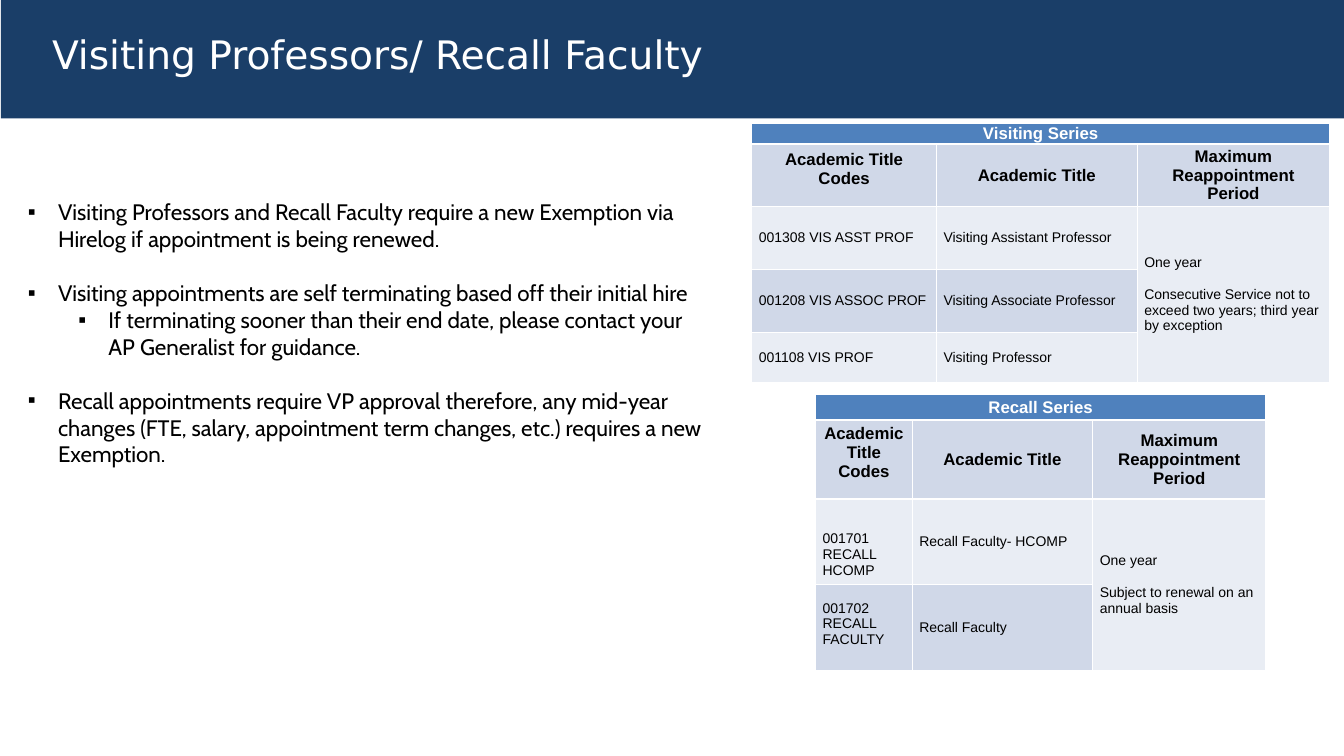
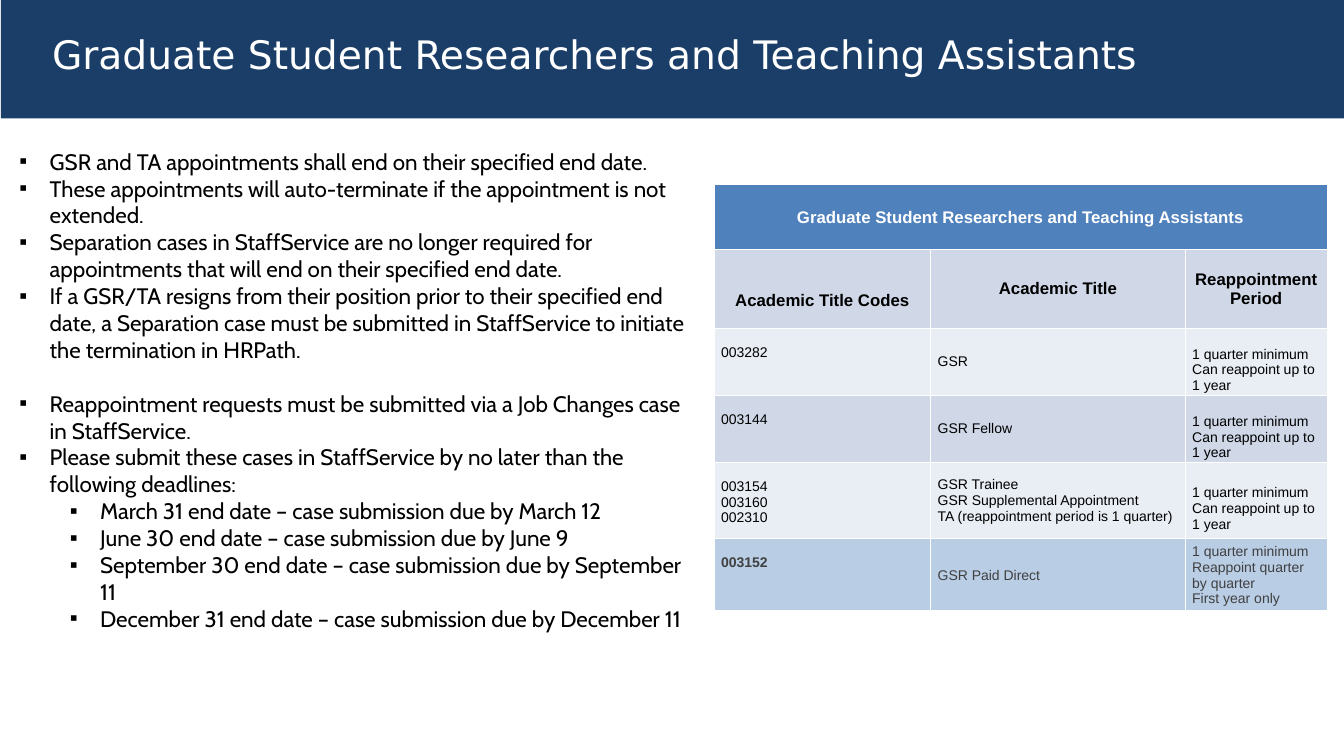
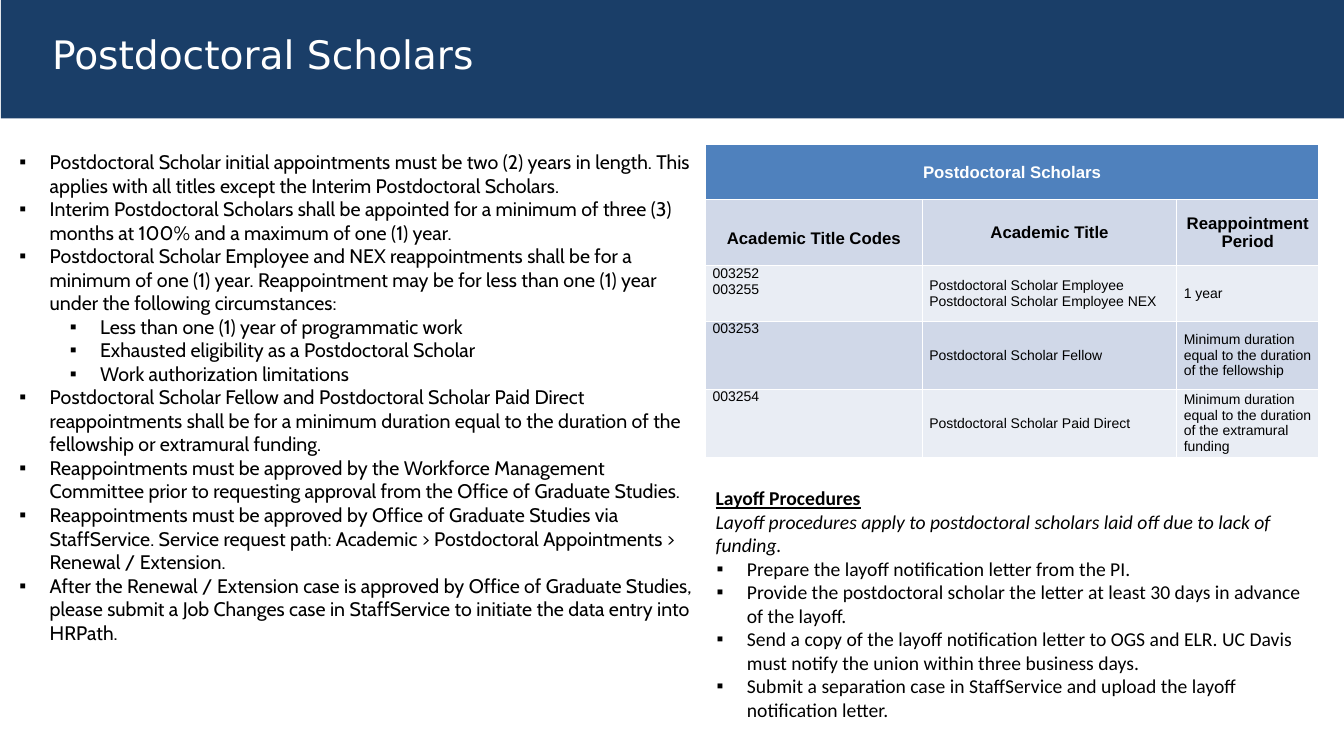
from dataclasses import dataclass

from lxml import etree
from pptx import Presentation
from pptx import util as u
from pptx.dml.color import RGBColor
from pptx.enum import shapes, text
from pptx.oxml import ns

UNIT = u.Inches(1) // 12
COLUMNS, ROWS = 160, 90
TOP = text.MSO_ANCHOR.TOP
MIDDLE = text.MSO_ANCHOR.MIDDLE
BOTTOM = text.MSO_ANCHOR.BOTTOM


@dataclass(frozen=True)
class Theme:
    """Colours, fonts and type sizes shared by the slides."""
    band: str = "1A3E68"
    white: str = "FFFFFF"
    ink: str = "000000"
    muted: str = "404040"
    table_title: str = "4F81BD"
    dark_row: str = "D0D8E8"
    light_row: str = "E9EDF4"
    accent_row: str = "B9CDE5"
    title_font: str = "DejaVu Sans"
    list_font: str = "Cabin"
    note_font: str = "Calibri"
    table_font: str = "Arial"
    title_size: float = 28
    list_size: float = 16
    small_list_size: float = 14
    header_size: float = 12
    cell_size: float = 10


THEME = Theme()


@dataclass(frozen=True)
class Box:
    """A region in grid columns and rows."""
    left: float
    top: float
    width: float
    height: float

    def emu(self):
        """Return the region in slide units."""
        return [grid(n) for n in (self.left, self.top, self.width, self.height)]


@dataclass(frozen=True)
class Item:
    """One paragraph of a list."""
    text: str
    level: int = 0
    gap: bool = False
    bullet: bool = True
    bold: bool = False
    underline: bool = False
    italic: bool = False


@dataclass(frozen=True)
class Cell:
    """One table cell; lead is the number of lines left free above the text."""
    text: str
    lead: int = 0
    anchor: text.MSO_ANCHOR = MIDDLE
    bold: bool = False
    gap: float = 0
    color: str = THEME.ink


def grid(count):
    """Convert grid steps to slide units."""
    return u.Emu(round(count * UNIT))


def style(paragraph, font, size, color, bold=False, italic=False, underline=False):
    """Format every run of a paragraph."""
    for run in paragraph.runs:
        run.font.name = font
        run.font.size = u.Pt(size)
        run.font.color.rgb = RGBColor.from_string(color)
        run.font.bold, run.font.italic, run.font.underline = bold, italic, underline


def place(shape, box):
    """Move and size a shape to a grid region."""
    shape.left, shape.top, shape.width, shape.height = box.emu()


def title_band(slide, title):
    """Draw the coloured band and set the title on it."""
    band = slide.shapes.add_shape(shapes.MSO_SHAPE.RECTANGLE, *Box(0.1, -0.2, COLUMNS, 14.3).emu())
    band.shadow.inherit = False
    band.fill.solid()
    band.fill.fore_color.rgb = RGBColor.from_string(THEME.band)
    band.line.fill.background()
    slide.shapes._spTree.insert(2, band._element)
    placeholder = slide.shapes.title
    place(placeholder, Box(5, 3, 146, 6.84))
    frame = placeholder.text_frame
    frame.auto_size = text.MSO_AUTO_SIZE.NONE
    frame.text = title
    frame.paragraphs[0].alignment = text.PP_ALIGN.LEFT
    style(frame.paragraphs[0], THEME.title_font, THEME.title_size, THEME.white)


def set_bullet(paragraph, item):
    """Give a paragraph its indent and its bullet."""
    properties = paragraph._p.get_or_add_pPr()
    left = 0.31 + 0.5 * item.level if item.bullet else 0
    properties.set("marL", str(u.Inches(left)))
    properties.set("indent", str(u.Inches(-0.3 if item.bullet else 0)))
    if item.bullet:
        etree.SubElement(properties, ns.qn("a:buFont"), typeface="Arial")
        etree.SubElement(properties, ns.qn("a:buChar"), char="▪")
    else:
        etree.SubElement(properties, ns.qn("a:buNone"))


def bullet_list(placeholder, box, items, font, size):
    """Fill a body placeholder with a list."""
    place(placeholder, box)
    frame = placeholder.text_frame
    frame.auto_size = text.MSO_AUTO_SIZE.NONE
    frame.vertical_anchor = TOP
    frame.text = "\n".join(item.text for item in items)
    for paragraph, item in zip(frame.paragraphs, items):
        paragraph.level = item.level
        set_bullet(paragraph, item)
        paragraph.line_spacing = 1.0
        paragraph.space_before = u.Pt(size * 1.21 if item.gap else 0)
        paragraph.space_after = u.Pt(0)
        style(paragraph, font, size, THEME.ink, item.bold, item.italic, item.underline)


def set_borders(cell, bottom_width=1):
    """Draw white lines on the four sides of a cell."""
    properties = cell._tc.get_or_add_tcPr()
    for index, side in enumerate("LRTB"):
        width = bottom_width if side == "B" else 1
        line = etree.Element(ns.qn("a:ln" + side), w=str(u.Pt(width)))
        fill = etree.SubElement(line, ns.qn("a:solidFill"))
        etree.SubElement(fill, ns.qn("a:srgbClr"), val=THEME.white)
        properties.insert(index, line)


def fill_cell(cell, content, fill, size, centred=False, bottom=0):
    """Write and format one table cell."""
    cell.fill.solid()
    cell.fill.fore_color.rgb = RGBColor.from_string(fill)
    cell.margin_left = cell.margin_right = u.Inches(0.07)
    cell.margin_top = u.Inches(0.16 * content.lead)
    cell.margin_bottom = u.Inches(bottom)
    cell.vertical_anchor = content.anchor
    cell.text_frame.text = content.text
    for index, paragraph in enumerate(cell.text_frame.paragraphs):
        paragraph.alignment = text.PP_ALIGN.CENTER if centred else text.PP_ALIGN.LEFT
        paragraph.space_before = u.Pt(content.gap if index else 0)
        style(paragraph, THEME.table_font, size, content.color, content.bold)


def new_table(slide, left, top, widths, heights):
    """Add a plain table with the given columns and rows."""
    box = Box(left, top, sum(widths), sum(heights))
    table = slide.shapes.add_table(len(heights), len(widths), *box.emu()).table
    table.first_row = table.horz_banding = False
    for column, width in zip(table.columns, widths):
        column.width = grid(width)
    for row, height in zip(table.rows, heights):
        row.height = grid(height)
    return table


def fill_rows(table, first, rows, fills, bottom_width=1):
    """Fill body rows; a missing last cell joins the one above."""
    for index, contents in enumerate(rows):
        for column, content in enumerate(contents):
            cell = table.cell(first + index, column)
            fill_cell(cell, content, fills[index % len(fills)], THEME.cell_size)
            set_borders(cell, bottom_width)
    if len(rows[-1]) < len(table.columns):
        last = len(table.columns) - 1
        table.cell(first, last).merge(table.cell(first + len(rows) - 1, last))


def series_table(slide, left, top, widths, heights, title, period, rows):
    """Draw a titled table of academic titles."""
    table = new_table(slide, left, top, widths, heights)
    table.cell(0, 0).merge(table.cell(0, len(widths) - 1))
    fill_cell(table.cell(0, 0), Cell(title, bold=True, color=THEME.white),
              THEME.table_title, THEME.header_size, True)
    for column, label in enumerate(("Academic Title Codes", "Academic Title", period)):
        anchor, bottom = (MIDDLE, 0) if column else (BOTTOM, 0.18)
        cell = table.cell(1, column)
        fill_cell(cell, Cell(label, anchor=anchor, bold=True), THEME.dark_row,
                  THEME.header_size, True, bottom)
        set_borders(cell)
    fill_rows(table, 2, rows, (THEME.light_row, THEME.dark_row))


def code(label, lead=0, **options):
    """Make a top-aligned cell of title codes."""
    return Cell(label, lead, TOP, **options)


def start_slide(presentation, layout, title):
    """Add a slide with its title band."""
    slide = presentation.slides.add_slide(presentation.slide_layouts[layout])
    title_band(slide, title)
    return slide


WIDE_COLUMNS = (25.8, 30.3, 16.9)


def visiting_slide(presentation):
    """Build the slide on visiting and recall faculty."""
    slide = start_slide(presentation, 1, "Visiting Professors/ Recall Faculty")
    bullet_list(slide.placeholders[1], Box(2, 23, 83, 36.75), [
        Item("Visiting Professors and Recall Faculty require a new Exemption via Hirelog if appointment is being renewed."),
        Item("Visiting appointments are self terminating based off their initial hire", gap=True),
        Item("If terminating sooner than their end date, please contact your AP Generalist for guidance.", 1),
        Item("Recall appointments require VP approval therefore, any mid-year changes (FTE, salary, appointment term changes, etc.) requires a new Exemption.", gap=True),
    ], THEME.list_font, THEME.list_size)
    period = "Maximum Reappointment Period"
    series_table(slide, 89.5, 14.75, (22, 23.9, 22.9), (2.4, 7.4, 7.5, 7.5, 6), "Visiting Series", period, [
        (Cell("001308 VIS ASST PROF"), Cell("Visiting Assistant Professor"),
         Cell("One year\nConsecutive Service not to exceed two years; third year by exception", gap=11.5)),
        (Cell("001208 VIS ASSOC PROF"), Cell("Visiting Associate Professor")),
        (Cell("001108 VIS PROF"), Cell("Visiting Professor")),
    ])
    series_table(slide, 97.1, 47, (11.5, 21.5, 20.6), (3, 9.4, 10.2, 10.2), "Recall Series", period, [
        (code("001701 RECALL HCOMP", 2), Cell("Recall Faculty- HCOMP"),
         Cell("One year\nSubject to renewal on an annual basis", gap=11.5)),
        (code("001702 RECALL FACULTY", 1), Cell("Recall Faculty")),
    ])


def graduate_slide(presentation):
    """Build the slide on graduate researchers and teaching assistants."""
    title = "Graduate Student Researchers and Teaching Assistants"
    slide = start_slide(presentation, 1, title)
    deadlines = (("March 31", "March 12"), ("June 30", "June 9"),
                 ("September 30", "September 11"), ("December 31", "December 11"))
    bullet_list(slide.placeholders[1], Box(1, 17, 83, 56.2), [
        Item("GSR and TA appointments shall end on their specified end date."),
        Item("These appointments will auto-terminate if the appointment is not extended."),
        Item("Separation cases in StaffService are no longer required for appointments that will end on their specified end date."),
        Item("If a GSR/TA resigns from their position prior to their specified end date, a Separation case must be submitted in StaffService to initiate the termination in HRPath."),
        Item("Reappointment requests must be submitted via a Job Changes case in StaffService.", gap=True),
        Item("Please submit these cases in StaffService by no later than the following deadlines:"),
        *(Item(f"{end} end date – case submission due by {due}", 1) for end, due in deadlines),
    ], THEME.list_font, THEME.list_size)
    quarter = Cell("1 quarter minimum\nCan reappoint up to 1 year", 1)
    series_table(slide, 85, 22, WIDE_COLUMNS, (7.7, 9.4, 8, 8, 9), title, "Reappointment Period", [
        (code("003282", 1), Cell("GSR"), quarter),
        (code("003144", 1), Cell("GSR Fellow"), quarter),
        (code("003154\n003160\n002310", 1),
         Cell("GSR Trainee\nGSR Supplemental Appointment\nTA (reappointment period is 1 quarter)"), quarter),
    ])
    paid_direct = new_table(slide, 85, 64.1, WIDE_COLUMNS, (8.8,))
    fill_rows(paid_direct, 0, [
        (code("003152", 1, bold=True, color=THEME.muted), Cell("GSR Paid Direct", color=THEME.muted),
         Cell("1 quarter minimum\nReappoint quarter by quarter\nFirst year only", color=THEME.muted)),
    ], (THEME.accent_row,), 3)


def postdoctoral_slide(presentation):
    """Build the slide on postdoctoral scholars."""
    title = "Postdoctoral Scholars"
    slide = start_slide(presentation, 3, title)
    bullet_list(slide.placeholders[1], Box(1, 17.25, 83, 60.6), [
        Item("Postdoctoral Scholar initial appointments must be two (2) years in length. This applies with all titles except the Interim Postdoctoral Scholars."),
        Item("Interim Postdoctoral Scholars shall be appointed for a minimum of three (3) months at 100% and a maximum of one (1) year."),
        Item("Postdoctoral Scholar Employee and NEX reappointments shall be for a minimum of one (1) year. Reappointment may be for less than one (1) year under the following circumstances:"),
        Item("Less than one (1) year of programmatic work", 1),
        Item("Exhausted eligibility as a Postdoctoral Scholar", 1),
        Item("Work authorization limitations", 1),
        Item("Postdoctoral Scholar Fellow and Postdoctoral Scholar Paid Direct reappointments shall be for a minimum duration equal to the duration of the fellowship or extramural funding."),
        Item("Reappointments must be approved by the Workforce Management Committee prior to requesting approval from the Office of Graduate Studies."),
        Item("Reappointments must be approved by Office of Graduate Studies via StaffService. Service request path: Academic > Postdoctoral Appointments > Renewal / Extension."),
        Item("After the Renewal / Extension case is approved by Office of Graduate Studies, please submit a Job Changes case in StaffService to initiate the data entry into HRPath."),
    ], THEME.list_font, THEME.small_list_size)
    series_table(slide, 84, 17.25, WIDE_COLUMNS, (6.5, 7.9, 6.6, 8.1, 8.1), title, "Reappointment Period", [
        (code("003252\n003255"), Cell("Postdoctoral Scholar Employee\nPostdoctoral Scholar Employee NEX"),
         Cell("1 year")),
        (code("003253"), Cell("Postdoctoral Scholar Fellow"),
         Cell("Minimum duration equal to the duration of the fellowship")),
        (code("003254"), Cell("Postdoctoral Scholar Paid Direct"),
         Cell("Minimum duration equal to the duration of the extramural funding")),
    ])
    bullet_list(slide.placeholders[2], Box(84, 57.25, 73, 29.5), [
        Item("Layoff Procedures", bullet=False, bold=True, underline=True),
        Item("Layoff procedures apply to postdoctoral scholars laid off due to lack of funding.", bullet=False, italic=True),
        Item("Prepare the layoff notification letter from the PI."),
        Item("Provide the postdoctoral scholar the letter at least 30 days in advance of the layoff."),
        Item("Send a copy of the layoff notification letter to OGS and ELR. UC Davis must notify the union within three business days."),
        Item("Submit a separation case in StaffService and upload the layoff notification letter."),
    ], THEME.note_font, THEME.small_list_size)


def main():
    """Build and save the presentation."""
    presentation = Presentation()
    presentation.slide_width, presentation.slide_height = grid(COLUMNS), grid(ROWS)
    for build in (visiting_slide, graduate_slide, postdoctoral_slide):
        build(presentation)
    presentation.save("out.pptx")


if __name__ == "__main__":
    main()
